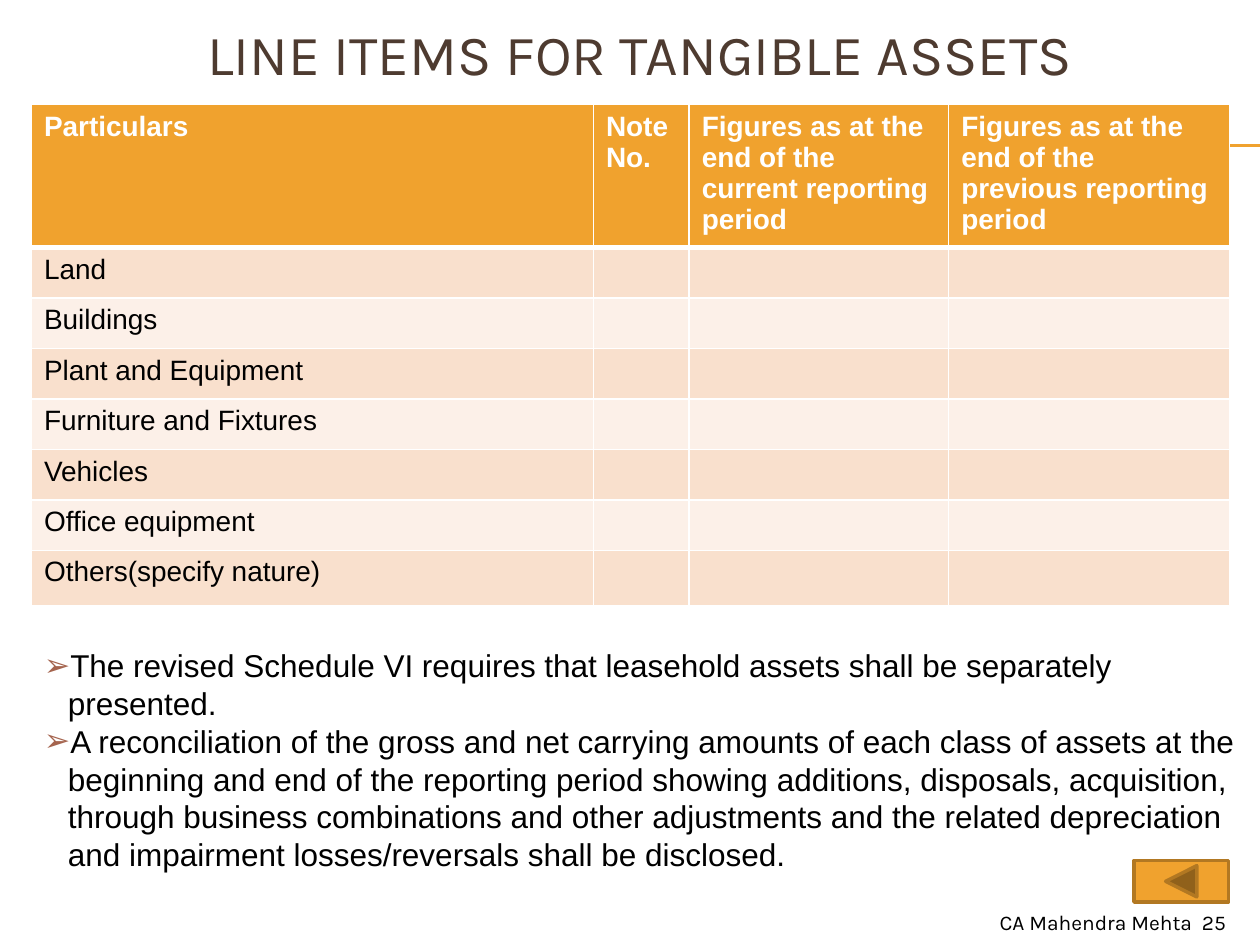
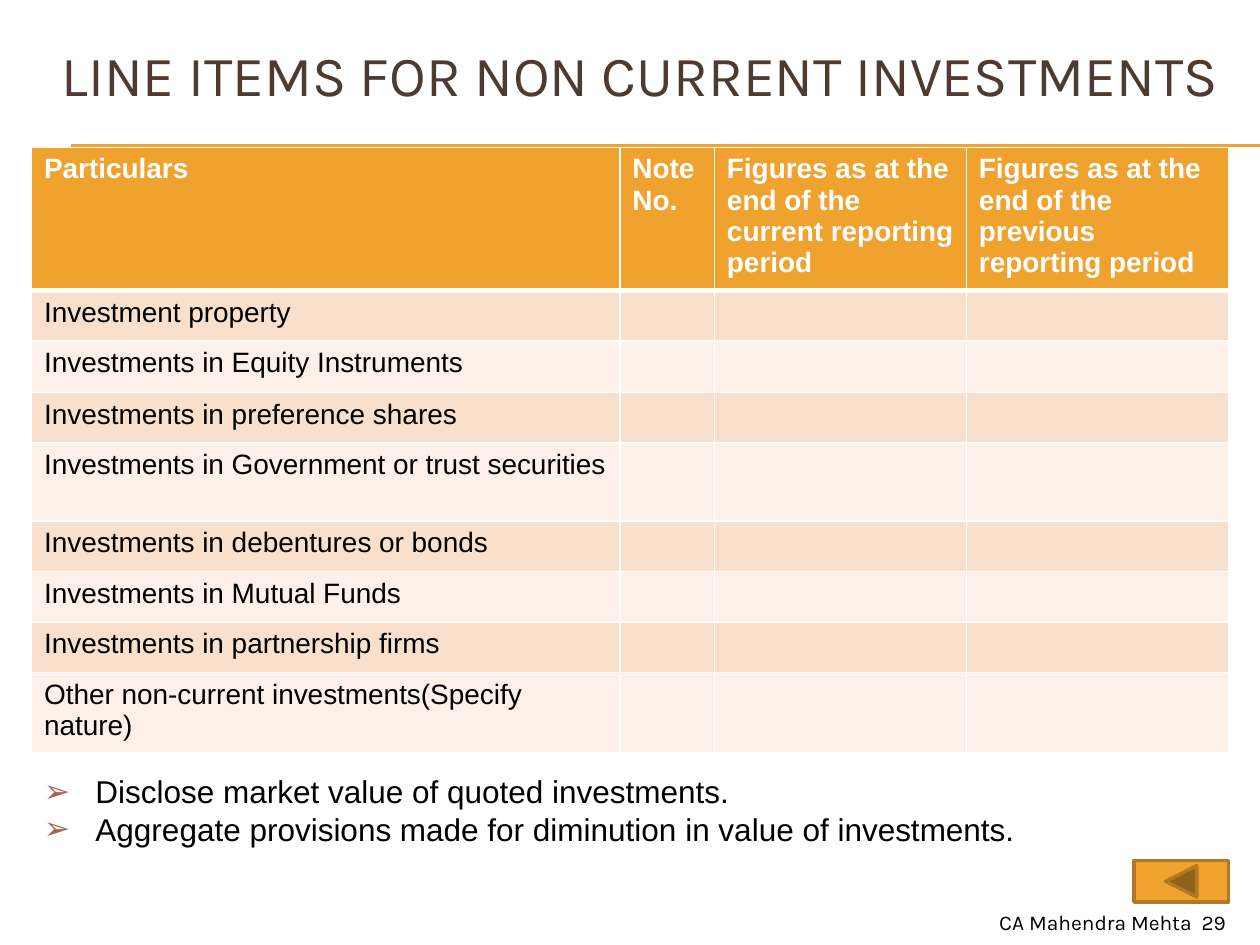
import pptx
import pptx.dml.color
import pptx.enum.shapes
import pptx.enum.text
import pptx.util
from lxml import etree

RGBColor = pptx.dml.color.RGBColor
Inches = pptx.util.Inches
Pt = pptx.util.Pt
ALIGN = pptx.enum.text.PP_ALIGN
ANCHOR = pptx.enum.text.MSO_ANCHOR

WHITE = RGBColor(0xFF, 0xFF, 0xFF)
BLACK = RGBColor(0x00, 0x00, 0x00)
BROWN = RGBColor(0x4E, 0x3B, 0x30)
ORANGE = RGBColor(0xF0, 0xA2, 0x2E)
DARK_ORANGE = RGBColor(0xB2, 0x78, 0x22)
RUST = RGBColor(0xA5, 0x64, 0x4E)
BANDS = (RGBColor(0xF9, 0xE0, 0xCD), RGBColor(0xFC, 0xF0, 0xE8))

HEADING_FONT = "Karla"
BODY_FONT = "Arial"
HEADERS = [
    "Particulars",
    "Note No.",
    "Figures as at the end of the current reporting period",
    "Figures as at the end of the previous reporting period",
]

SLIDES = [
    {
        "title": "LINE ITEMS FOR TANGIBLE ASSETS",
        "title_box": (0.33, 0.17, 9.5, 0.5),
        "table_box": (0.25, 0.83, 9.5, 4),
        "columns": [4.46, 0.76, 2.06, 2.23],
        "header_height": 1.12,
        "items": [
            ("Land", 0.39),
            ("Buildings", 0.39),
            ("Plant and Equipment", 0.39),
            ("Furniture and Fixtures", 0.39),
            ("Vehicles", 0.39),
            ("Office equipment", 0.39),
            ("Others(specify nature)", 0.44),
        ],
        "notes_box": (0.25, 5.08, 9.75, 1.92),
        "notes_indent": 0.19,
        "notes": [
            "The revised Schedule VI requires that leasehold assets shall be separately presented.",
            "A reconciliation of the gross and net carrying amounts of each class of assets at the "
            "beginning and end of the reporting period showing additions, disposals, acquisition, "
            "through business combinations and other adjustments and the related depreciation "
            "and impairment losses/reversals shall be disclosed.",
        ],
        "number": 25,
    },
    {
        "title": "LINE ITEMS FOR NON CURRENT INVESTMENTS",
        "title_box": (0.33, 0.25, 9.5, 0.67),
        "table_box": (0.25, 1.17, 9.5, 4.84),
        "columns": [4.67, 0.75, 2, 2.08],
        "header_height": 1.04,
        "items": [
            ("Investment property", 0.39),
            ("Investments in Equity Instruments", 0.41),
            ("Investments in preference shares", 0.39),
            ("Investments in Government or trust securities", 0.62),
            ("Investments in debentures or bonds", 0.39),
            ("Investments in Mutual Funds", 0.39),
            ("Investments in partnership firms", 0.39),
            ("Other non-current investments(Specify nature)", 0.62),
        ],
        "notes_box": (0.25, 6.08, 9.33, 1.01),
        "notes_indent": 0.41,
        "notes": [
            "Disclose market value of quoted investments.",
            "Aggregate provisions made for diminution in value of investments.",
        ],
        "number": 29,
    },
]


def to_inches(box):
    return [Inches(length) for length in box]


def add_child(parent, tag, **attributes):
    return etree.SubElement(parent, pptx.oxml.ns.qn(tag), attributes)


def write_text(paragraph, text, font=BODY_FONT, size=16, color=BLACK, bold=False,
               align=ALIGN.LEFT):
    paragraph.alignment = align
    run = paragraph.add_run()
    run.text = text
    run.font.name = font
    run.font.size = Pt(size)
    run.font.bold = bold
    run.font.color.rgb = color


def add_text_frame(slide, box, anchor=ANCHOR.TOP):
    frame = slide.shapes.add_textbox(*to_inches(box)).text_frame
    frame.word_wrap = True
    frame.vertical_anchor = anchor
    return frame


def set_bullet(paragraph, indent):
    properties = paragraph._p.get_or_add_pPr()
    properties.set("marL", str(Inches(indent)))
    properties.set("indent", str(-Inches(indent)))
    bullet_color = add_child(properties, "a:buClr")
    add_child(bullet_color, "a:srgbClr", val=str(RUST))
    add_child(properties, "a:buFont", typeface=BODY_FONT)
    add_child(properties, "a:buChar", char="➢")


def set_borders(cell, top, bottom):
    properties = cell._tc.get_or_add_tcPr()
    for side, width in (("L", 1), ("R", 1), ("T", top), ("B", bottom)):
        border = add_child(properties, f"a:ln{side}", w=str(Pt(width)))
        fill = add_child(border, "a:solidFill")
        add_child(fill, "a:srgbClr", val=str(WHITE))


def add_rules(slide):
    for top in (1.15, 1.16):
        rule = slide.shapes.add_connector(
            pptx.enum.shapes.MSO_CONNECTOR.STRAIGHT, *to_inches((0.56, top, 10, top)))
        rule.line.color.rgb = ORANGE
        rule.line.width = Pt(0.75)
        add_child(rule._element.spPr, "a:effectLst")


def add_title(slide, box, title):
    frame = add_text_frame(slide, box, ANCHOR.MIDDLE)
    write_text(frame.paragraphs[0], title, font=HEADING_FONT, size=32.4, color=BROWN,
               align=ALIGN.CENTER)


def add_line_items(slide, box, columns, header_height, items):
    rows = [HEADERS] + [[item, "", "", ""] for item, _ in items]
    heights = [header_height] + [height for _, height in items]
    table = slide.shapes.add_table(len(rows), len(columns), *to_inches(box)).table
    table.first_row = table.horz_banding = False
    for column, width in zip(table.columns, columns):
        column.width = Inches(width)
    for index, (row, height, texts) in enumerate(zip(table.rows, heights, rows)):
        row.height = Inches(height)
        is_header = index == 0
        for cell, text in zip(row.cells, texts):
            set_borders(cell, top=3 if index == 1 else 1, bottom=3 if is_header else 1)
            cell.fill.solid()
            cell.fill.fore_color.rgb = ORANGE if is_header else BANDS[(index - 1) % 2]
            if is_header:
                cell.margin_bottom = Inches(0.02)
            if text:
                write_text(cell.text_frame.paragraphs[0], text, bold=is_header,
                           color=WHITE if is_header else BLACK)


def add_notes(slide, box, notes, indent):
    frame = add_text_frame(slide, box)
    for index, note in enumerate(notes):
        paragraph = frame.add_paragraph() if index else frame.paragraphs[0]
        write_text(paragraph, note, size=18)
        set_bullet(paragraph, indent)


def add_back_button(slide, box):
    button = slide.shapes.add_shape(
        pptx.enum.shapes.MSO_SHAPE.ACTION_BUTTON_BACK_OR_PREVIOUS, *to_inches(box))
    button.shadow.inherit = False
    button.fill.solid()
    button.fill.fore_color.rgb = ORANGE
    button.line.color.rgb = DARK_ORANGE
    button.line.width = Pt(2)


def add_footer(slide, box, number):
    frame = add_text_frame(slide, box)
    write_text(frame.paragraphs[0], f"CA Mahendra Mehta  {number}", font=HEADING_FONT, size=12,
               align=ALIGN.RIGHT)


def add_line_item_slide(presentation, content):
    slide = presentation.slides.add_slide(presentation.slide_layouts[6])
    add_rules(slide)
    add_title(slide, content["title_box"], content["title"])
    add_line_items(slide, content["table_box"], content["columns"],
                   content["header_height"], content["items"])
    add_notes(slide, content["notes_box"], content["notes"], content["notes_indent"])
    add_back_button(slide, (9, 6.83, 0.75, 0.33))
    add_footer(slide, (7.58, 7.17, 2.25, 0.33), content["number"])


def main():
    presentation = pptx.Presentation()
    presentation.slide_width = Inches(10)
    presentation.slide_height = Inches(7.5)
    for content in SLIDES:
        add_line_item_slide(presentation, content)
    presentation.save("out.pptx")


if __name__ == "__main__":
    main()
